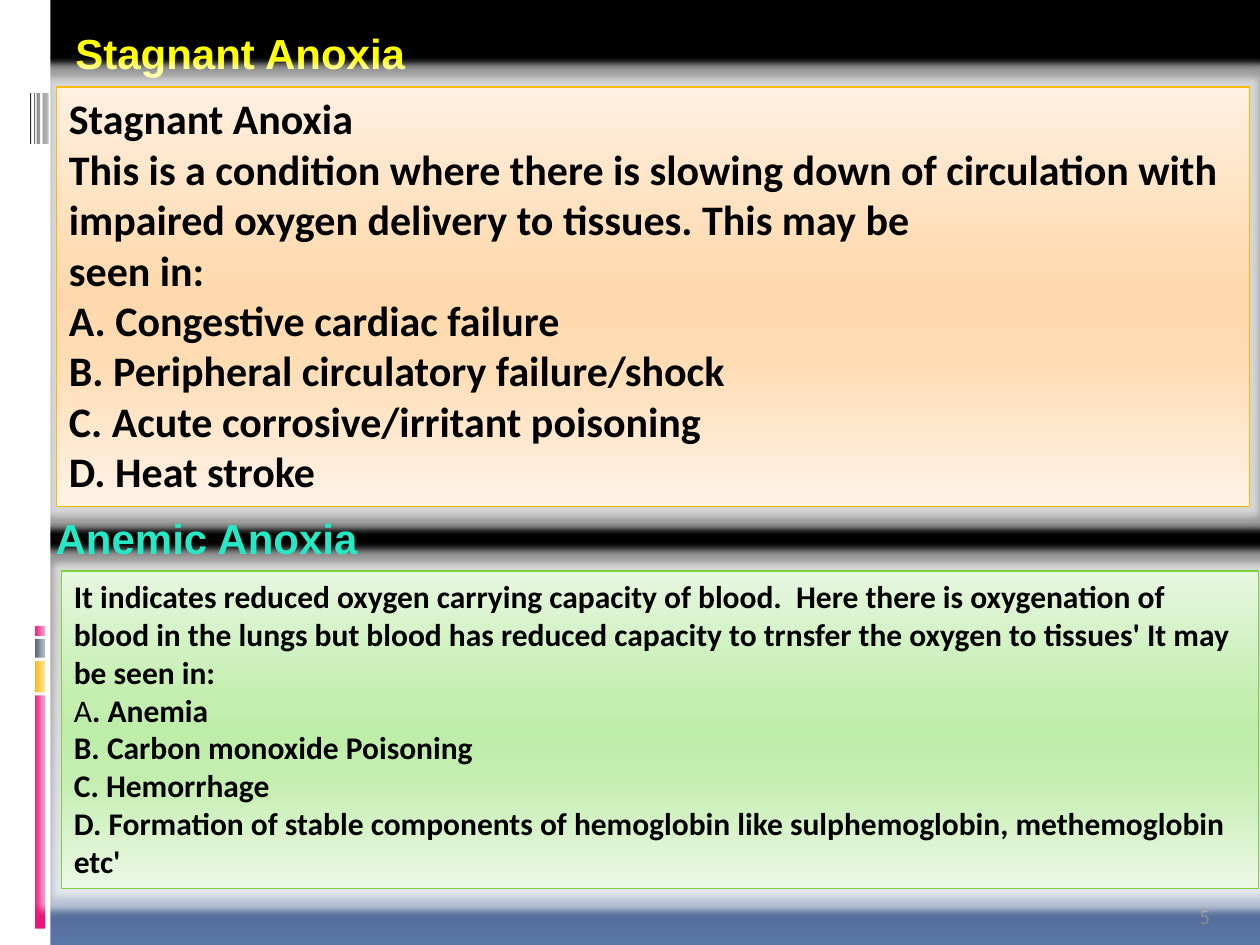
from lxml import etree
from pptx import Presentation
from pptx.dml.color import RGBColor
from pptx.enum.shapes import MSO_SHAPE
from pptx.enum.text import MSO_ANCHOR, PP_ALIGN
from pptx.oxml.ns import qn
from pptx.util import Cm, Pt

RECT = MSO_SHAPE.RECTANGLE
TOP, BOTTOM = MSO_ANCHOR.TOP, MSO_ANCHOR.BOTTOM
LEFT, CENTER = PP_ALIGN.LEFT, PP_ALIGN.CENTER

COLORS = {
    "white": "FFFFFF", "black": "000000", "pink": "EA157A", "amber": "FEB80A",
    "slate": "4E5B6F", "grey": "8C8C8C", "yellow": "FFFF00", "green": "7FD13B",
}
# Vertical gradients: (position in percent, colour)
GRADIENTS = {
    "night": [(0, "000000"), (65, "000000"), (100, "5B77A8")],
    "peach": [(0, "FFF0E1"), (40, "FFDCB4"), (50, "FFD9AD"), (65, "FFDCB4"), (100, "FFF3E7")],
    "mint": [(0, "E6F7E0"), (40, "C4EEB0"), (50, "BEEDA9"), (65, "C4EEB0"), (100, "ECF8E6")],
    "teal": [(0, "006659"), (78, "26E8C5"), (100, "EDFCF8")],
}


def rgb(name):
    return RGBColor.from_string(COLORS[name])


def sub(parent, tag, **attrs):
    return etree.SubElement(parent, qn(tag), {k: str(v) for k, v in attrs.items()})


class Deck:
    def __init__(self, slide, font="Calibri"):
        self.s = slide
        self.font = font

    def gradient(self, fill, owner, name):
        """Give the fill held by the owner element a top-to-bottom gradient."""
        fill.gradient()
        fill.gradient_angle = 270
        stops = owner.xpath(".//a:gsLst")[0]
        for gs in list(stops):
            stops.remove(gs)
        for pos, color in GRADIENTS[name]:
            sub(sub(stops, "a:gs", pos=pos * 1000), "a:srgbClr", val=color)

    def background(self, name):
        self.gradient(self.s.background.fill, self.s._element, name)

    def bar(self, x, y, w, h, color):
        sp = self.s.shapes.add_shape(RECT, Cm(x), Cm(y), Cm(w), Cm(h))
        sp.shadow.inherit = False
        sp.fill.solid()
        sp.fill.fore_color.rgb = rgb(color)
        sp.line.fill.background()

    def add_paragraphs(self, tf, paragraphs, size, color, font=None, align=LEFT):
        """Each paragraph is a list of (text, bold) runs."""
        for i, runs in enumerate(paragraphs):
            p = tf.paragraphs[0] if i == 0 else tf.add_paragraph()
            p.alignment = align
            for text, bold in runs:
                r = p.add_run()
                r.text = text
                r.font.name = font or self.font
                r.font.size = Pt(size)
                r.font.bold = bold
                if color in GRADIENTS:
                    self.gradient(r.font.fill, r._r, color)
                else:
                    r.font.color.rgb = rgb(color)

    def text(self, x, y, w, h, text, size, color, bold=True, font=None,
             align=LEFT, anchor=TOP, wrap=True):
        tf = self.s.shapes.add_textbox(Cm(x), Cm(y), Cm(w), Cm(h)).text_frame
        tf.word_wrap = wrap
        tf.vertical_anchor = anchor
        self.add_paragraphs(tf, [[(text, bold)]], size, color, font, align)

    def panel(self, x, y, w, h, fill, line, paragraphs, size):
        sp = self.s.shapes.add_shape(RECT, Cm(x), Cm(y), Cm(w), Cm(h))
        self.gradient(sp.fill, sp._element, fill)
        sp.line.color.rgb = rgb(line)
        sp.line.width = Pt(0.94)
        # Soft white glow in place of the shadow
        sp.shadow.inherit = False
        effects = sp._element.spPr.find(qn("a:effectLst"))
        glow = sub(effects, "a:glow", rad=Cm(0.3))
        sub(sub(glow, "a:srgbClr", val=COLORS["white"]), "a:alpha", val=60000)
        tf = sp.text_frame
        tf.word_wrap = True
        tf.vertical_anchor = TOP
        self.add_paragraphs(tf, paragraphs, size, "black")


def bold_lines(*lines):
    return [[(line, True)] for line in lines]


def main():
    prs = Presentation()
    prs.slide_width, prs.slide_height = Cm(25.4), Cm(19.05)
    deck = Deck(prs.slides.add_slide(prs.slide_layouts[6]))
    deck.background("night")

    # Side strip with its stacked colour blocks
    deck.bar(0, 0, 1.02, 19.05, "white")
    for y, h, color in [(14.02, 4.7, "pink"), (13.33, 0.63, "amber"),
                        (12.88, 0.38, "slate"), (12.62, 0.2, "pink")]:
        deck.bar(0.71, y, 0.2, h, color)

    # Barcode ornament
    for x, w in [(0.86, 0.12), (0.74, 0.07), (0.69, 0.02), (0.61, 0.02)]:
        deck.bar(x, 1.88, w, 1.02, "black")

    # Page number
    deck.text(23.93, 17.83, 1.27, 1.02, "5", 12, "grey", bold=False, anchor=BOTTOM)

    # Stagnant anoxia
    deck.text(1.27, 0.43, 11.23, 1.27, "Stagnant Anoxia", 24, "yellow", font="Arial")
    deck.panel(1.14, 1.75, 24.05, 8.46, "peach", "amber", bold_lines(
        "Stagnant Anoxia",
        "This is a condition where there is slowing down of circulation with impaired "
        "oxygen delivery to tissues. This may be",
        "seen in:",
        "A. Congestive cardiac failure",
        "B. Peripheral circulatory failure/shock",
        "C. Acute corrosive/irritant poisoning",
        "D. Heat stroke"), 24)

    # Anemic anoxia
    intro = bold_lines(
        "It indicates reduced oxygen carrying capacity of blood.  Here there is oxygenation "
        "of blood in the lungs but blood has reduced capacity to trnsfer the oxygen to "
        "tissues' It may be seen in:")
    causes = bold_lines(
        "B. Carbon monoxide Poisoning",
        "C. Hemorrhage",
        "D. Formation of stable components of hemoglobin like sulphemoglobin, "
        "methemoglobin etc'")
    deck.panel(1.24, 11.51, 24.13, 6.4, "mint", "green",
               intro + [[("A", False), (". Anemia", True)]] + causes, 18)
    deck.text(0.84, 10.21, 6.65, 1.27, "Anemic Anoxia", 24, "teal", font="Arial",
              align=CENTER, wrap=False)

    prs.save("out.pptx")


if __name__ == "__main__":
    main()
